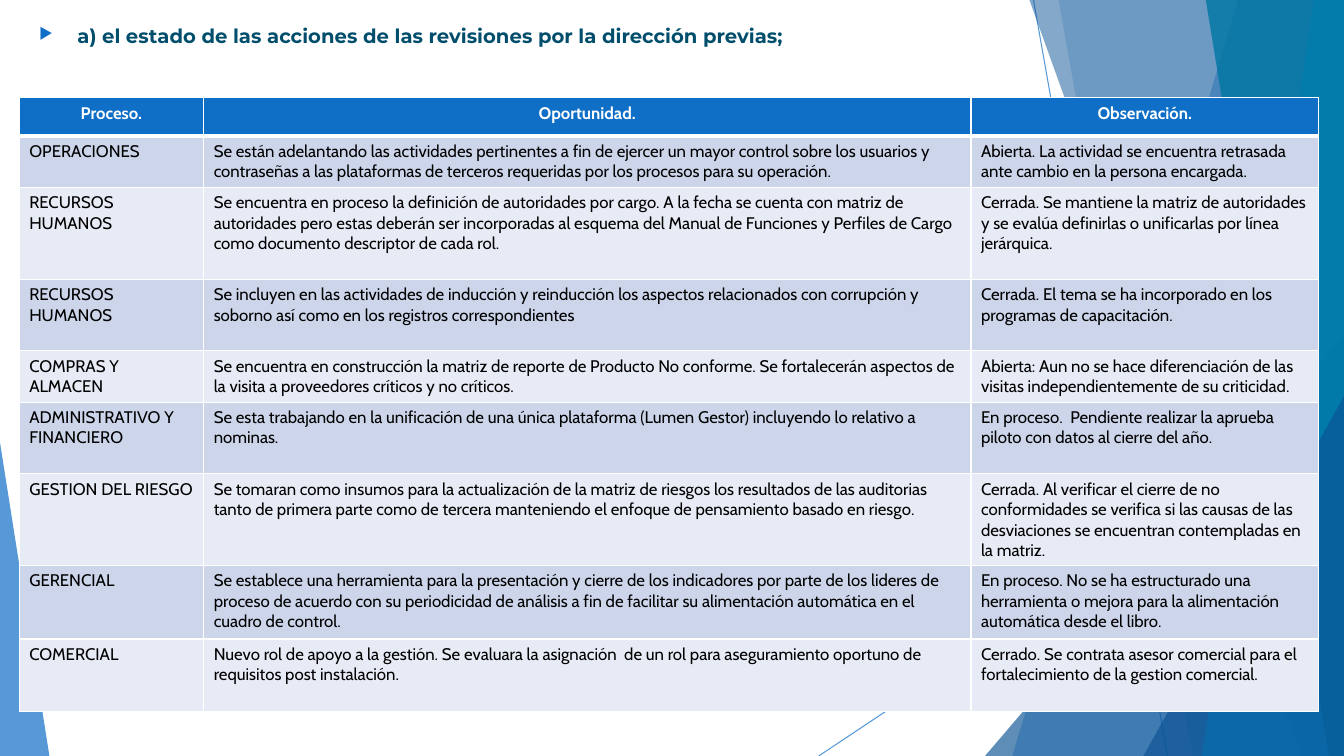
"""Builds the slide on the state of actions from earlier management reviews."""
from typing import NamedTuple

from lxml import etree
from pptx import Presentation
from pptx import util as u
from pptx.dml.color import RGBColor
from pptx.enum import shapes, text
from pptx.oxml import ns

COLORS = {
    "blue": "0F6FC6", "navy": "0B5394", "cyan": "009DD9", "teal": "0076A3",
    "heading": "004E6C", "black": "000000", "white": "FFFFFF",
    "odd_row": "CCD5EA", "even_row": "E7EBF5",
}
WIDTH, HEIGHT = 13.33, 7.5
TABLE_LEFT, TABLE_TOP = 0.19, 0.97
COLUMN_WIDTHS = (1.83, 7.61, 3.45)


class Ray(NamedTuple):
    start: tuple[float, float]
    end: tuple[float, float]


class Band(NamedTuple):
    top_left: float
    bottom_left: float
    color: str
    opacity: int


class Triangle(NamedTuple):
    left: float
    top: float
    width: float
    apex: float
    color: str
    opacity: int


class Row(NamedTuple):
    height: float
    cells: tuple[str, str, str]


RAYS = (Ray((10.25, 0), (11.58, HEIGHT)), Ray((WIDTH, 4.03), (8.12, HEIGHT)))
FACETS = (
    Band(12.28, 10.04, "blue", 36),
    Band(10.5, 11.83, "blue", 20),
    Triangle(9.77, 3.33, 3.56, 1, "navy", 66),
    Band(10.21, 12.91, "navy", 50),
    Band(13.03, 11.92, "cyan", 70),
    Band(11.96, 13.18, "teal", 80),
    Triangle(11.34, 3.93, 1.99, 1, "navy", 66),
    Triangle(0, 4.39, 0.49, 0, "blue", 70),
)
ROWS = (
    Row(0.38, ("Proceso.", "Oportunidad.", "Observación.")),
    Row(0.51, (
        "OPERACIONES",
        "Se están adelantando las actividades pertinentes a fin de ejercer un mayor control sobre los usuarios y contraseñas a las plataformas de terceros requeridas por los procesos para su operación.",
        "Abierta. La actividad se encuentra retrasada ante cambio en la persona encargada.")),
    Row(0.91, (
        "RECURSOS HUMANOS",
        "Se encuentra en proceso la definición de autoridades por cargo. A la fecha se cuenta con matriz de autoridades pero estas deberán ser incorporadas al esquema del Manual de Funciones y Perfiles de Cargo como documento descriptor de cada rol.",
        "Cerrada. Se mantiene la matriz de autoridades y se evalúa definirlas o unificarlas por línea jerárquica.")),
    Row(0.71, (
        "RECURSOS HUMANOS",
        "Se incluyen en las actividades de inducción y reinducción los aspectos relacionados con corrupción y soborno así como en los registros correspondientes",
        "Cerrada. El tema se ha incorporado en los programas de capacitación.")),
    Row(0.51, (
        "COMPRAS Y ALMACEN",
        "Se encuentra en construcción la matriz de reporte de Producto No conforme. Se fortalecerán aspectos de la visita a proveedores críticos y no críticos.",
        "Abierta: Aun no se hace diferenciación de las visitas independientemente de su criticidad.")),
    Row(0.71, (
        "ADMINISTRATIVO Y FINANCIERO",
        "Se esta trabajando en la unificación de una única plataforma (Lumen Gestor) incluyendo lo relativo a nominas.",
        "En proceso.  Pendiente realizar la aprueba piloto con datos al cierre del año.")),
    Row(0.91, (
        "GESTION DEL RIESGO",
        "Se tomaran como insumos para la actualización de la matriz de riesgos los resultados de las auditorias tanto de primera parte como de tercera manteniendo el enfoque de pensamiento basado en riesgo.",
        "Cerrada. Al verificar el cierre de no conformidades se verifica si las causas de las desviaciones se encuentran contempladas en la matriz.")),
    Row(0.73, (
        "GERENCIAL",
        "Se establece una herramienta para la presentación y cierre de los indicadores por parte de los lideres de proceso de acuerdo con su periodicidad de análisis a fin de facilitar su alimentación automática en el cuadro de control.",
        "En proceso. No se ha estructurado una herramienta o mejora para la alimentación automática desde el libro.")),
    Row(0.72, (
        "COMERCIAL",
        "Nuevo rol de apoyo a la gestión. Se evaluara la asignación  de un rol para aseguramiento oportuno de requisitos post instalación.",
        "Cerrado. Se contrata asesor comercial para el fortalecimiento de la gestion comercial.")),
)


def rgb(name: str) -> RGBColor:
    return RGBColor.from_string(COLORS[name])


def add_child(parent, tag: str, **attributes):
    return etree.SubElement(parent, ns.qn(tag), attributes)


def set_opacity(properties, percent: int) -> None:
    color = next(properties.iter(ns.qn("a:srgbClr")))
    add_child(color, "a:alpha", val=str(percent * 1000))


def write_text(frame, content: str, *, font: str, size: float, color: str,
               bold: bool = False, align=text.PP_ALIGN.LEFT):
    frame.word_wrap = True
    paragraph = frame.paragraphs[0]
    paragraph.alignment = align
    run = paragraph.add_run()
    run.text = content
    run.font.name = font
    run.font.size = u.Pt(size)
    run.font.bold = bold
    run.font.color.rgb = rgb(color)
    return paragraph


def draw_ray(slide, ray: Ray) -> None:
    points = [u.Inches(value) for value in ray.start + ray.end]
    connector = slide.shapes.add_connector(shapes.MSO_CONNECTOR.STRAIGHT, *points)
    connector.line.color.rgb = rgb("blue")
    connector.line.width = u.Pt(0.75)
    properties = connector._element.spPr
    set_opacity(properties, 70)
    add_child(properties, "a:effectLst")


def draw_facet(slide, facet: Band | Triangle) -> None:
    if isinstance(facet, Band):
        corners = [(facet.top_left, 0), (WIDTH, 0), (WIDTH, HEIGHT), (facet.bottom_left, HEIGHT)]
        points = [(u.Inches(x), u.Inches(y)) for x, y in corners]
        builder = slide.shapes.build_freeform(*points[0])
        builder.add_line_segments(points[1:], close=True)
        shape = builder.convert_to_shape()
    else:
        shape = slide.shapes.add_shape(
            shapes.MSO_SHAPE.ISOSCELES_TRIANGLE, u.Inches(facet.left), u.Inches(facet.top),
            u.Inches(facet.width), u.Inches(HEIGHT - facet.top))
        shape.adjustments[0] = facet.apex
    shape.shadow.inherit = False
    shape.line.fill.background()
    shape.fill.solid()
    shape.fill.fore_color.rgb = rgb(facet.color)
    set_opacity(shape._element.spPr, facet.opacity)


def draw_heading(slide) -> None:
    box = slide.shapes.add_textbox(u.Inches(0.29), u.Inches(0.19), u.Inches(9.6), u.Inches(0.47))
    paragraph = write_text(
        box.text_frame, "a) el estado de las acciones de las revisiones por la dirección previas;",
        font="Montserrat", size=14, color="heading", bold=True)
    properties = paragraph._p.get_or_add_pPr()
    indent = u.Inches(0.38)
    properties.set("marL", str(indent))
    properties.set("indent", str(-indent))
    add_child(add_child(properties, "a:buClr"), "a:srgbClr", val=COLORS["blue"])
    add_child(properties, "a:buSzPct", val="80000")
    add_child(properties, "a:buChar", char="▶")


def set_borders(cell, top: float, bottom: float) -> None:
    properties = cell._tc.get_or_add_tcPr()
    for side, width in {"L": 1, "R": 1, "T": top, "B": bottom}.items():
        line = add_child(properties, f"a:ln{side}", w=str(u.Pt(width)))
        add_child(add_child(line, "a:solidFill"), "a:srgbClr", val=COLORS["white"])


def draw_table(slide) -> None:
    table = slide.shapes.add_table(
        len(ROWS), len(COLUMN_WIDTHS), u.Inches(TABLE_LEFT), u.Inches(TABLE_TOP),
        u.Inches(sum(COLUMN_WIDTHS)), u.Inches(sum(row.height for row in ROWS))).table
    for column, width in zip(table.columns, COLUMN_WIDTHS):
        column.width = u.Inches(width)
    for index, row in enumerate(ROWS):
        header = index == 0
        fill = "blue" if header else "odd_row" if index % 2 else "even_row"
        table.rows[index].height = u.Inches(row.height)
        for cell, content in zip(table.rows[index].cells, row.cells):
            set_borders(cell, top=3 if index == 1 else 1, bottom=3 if header else 1)
            cell.fill.solid()
            cell.fill.fore_color.rgb = rgb(fill)
            write_text(cell.text_frame, content, font="Cabin", size=12, bold=header,
                       color="white" if header else "black",
                       align=text.PP_ALIGN.CENTER if header else text.PP_ALIGN.LEFT)


def main() -> None:
    presentation = Presentation()
    presentation.slide_width = u.Inches(WIDTH)
    presentation.slide_height = u.Inches(HEIGHT)
    slide = presentation.slides.add_slide(presentation.slide_layouts[6])
    for ray in RAYS:
        draw_ray(slide, ray)
    for facet in FACETS:
        draw_facet(slide, facet)
    draw_heading(slide)
    draw_table(slide)
    presentation.save("out.pptx")


if __name__ == "__main__":
    main()
